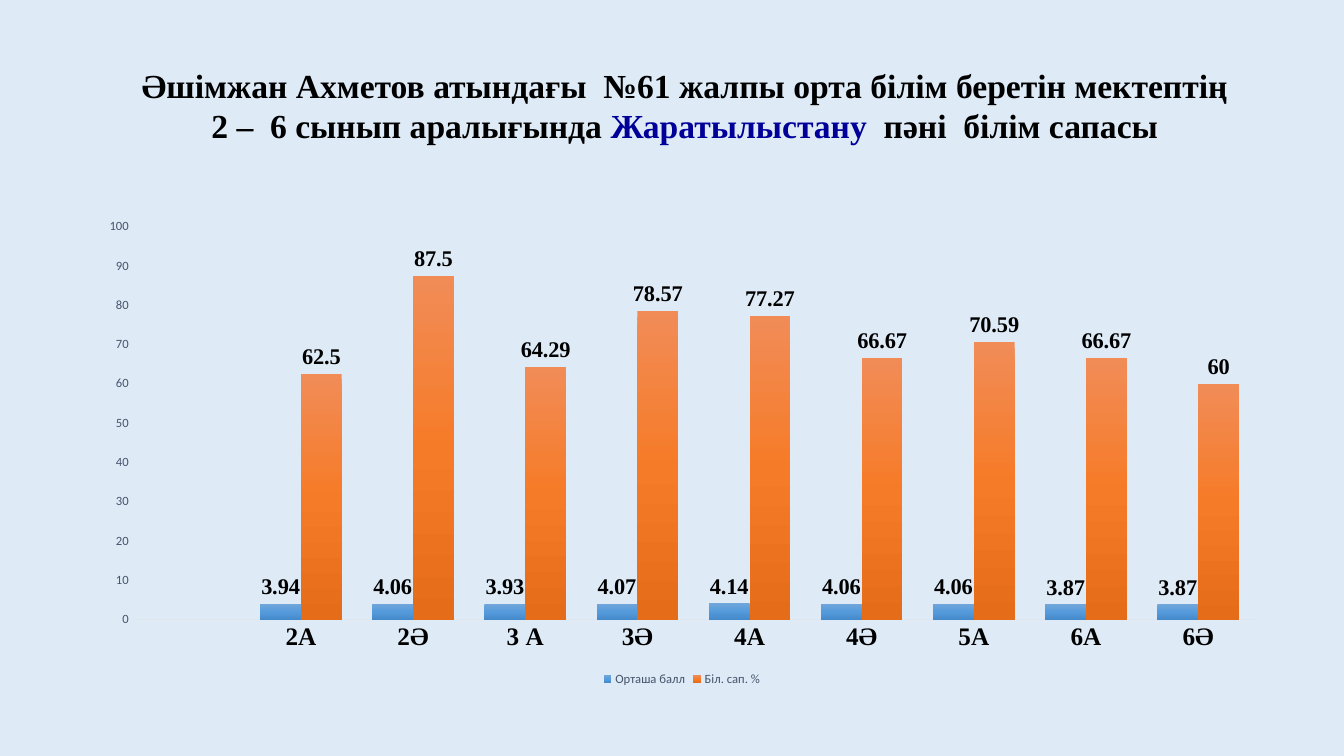
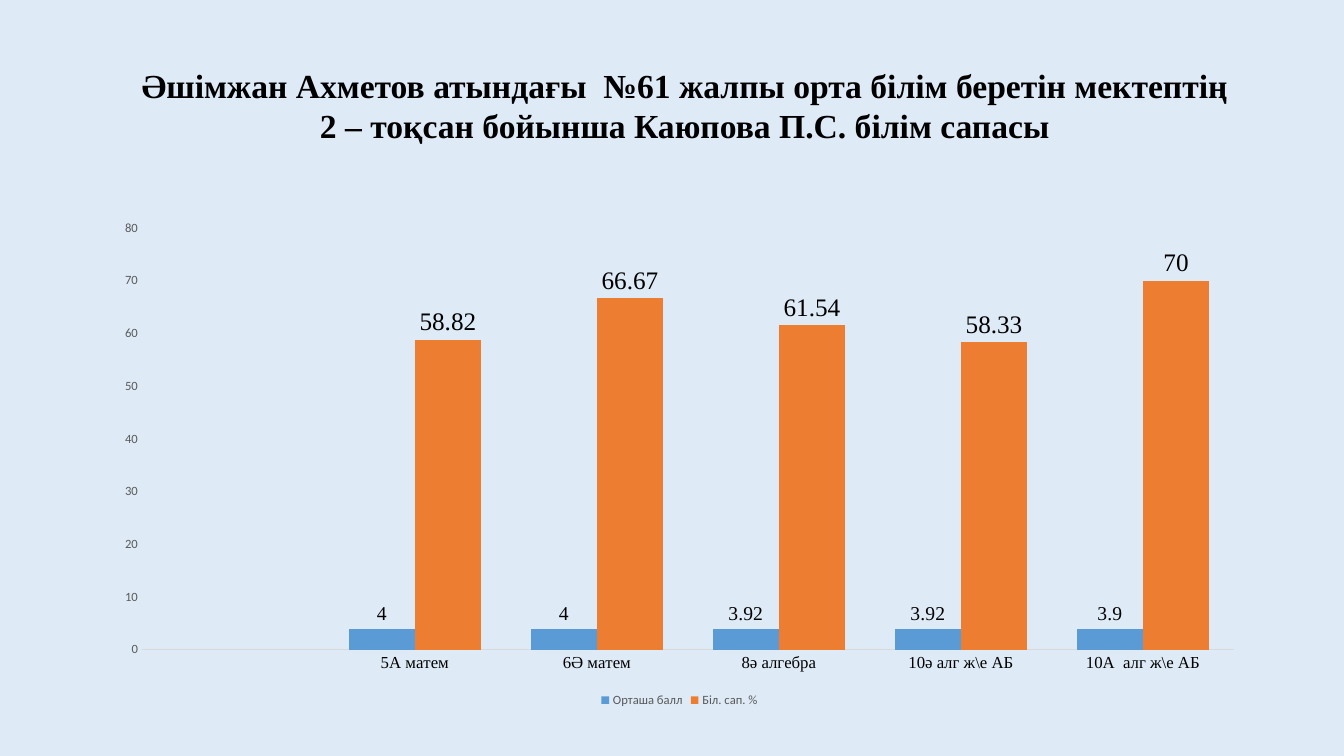
from copy import deepcopy
from dataclasses import dataclass

from pptx import Presentation
from pptx.chart.data import CategoryChartData
from pptx.dml.color import RGBColor
from pptx.enum.chart import XL_CHART_TYPE, XL_LABEL_POSITION, XL_LEGEND_POSITION, XL_TICK_MARK
from pptx.enum.text import MSO_ANCHOR, MSO_AUTO_SIZE, PP_ALIGN
from pptx.oxml.ns import qn
from pptx.util import Cm, Pt

BACKGROUND = "DEEBF7"
BLACK = "000000"
NAVY = "000099"
SERIF = "Times New Roman"
SANS = "Calibri"
SCHOOL = "Әшімжан Ахметов атындағы  №61 жалпы орта білім беретін мектептің"
SCORE, QUALITY = "Орташа балл", "Біл. сап. %"


@dataclass
class ChartStyle:
    """What differs between the two grade charts."""
    box: tuple  # left, top, width, height in cm
    top_value: int
    muted: str
    axis_line: str
    category_size: int
    label_sizes: tuple
    bold: bool
    fills: tuple  # one list of colours per series


def rgb(hex_code):
    return RGBColor.from_string(hex_code)


def set_font(font, name, size, color=BLACK, bold=False):
    font.name = name
    font.size = Pt(size)
    font.color.rgb = rgb(color)
    font.bold = bold


def prepare_layout(prs):
    """Set the background and title place shared by all slides."""
    background = prs.slide_master.background.fill
    background.solid()
    background.fore_color.rgb = rgb(BACKGROUND)
    layout = prs.slide_layouts.get_by_name("Title Only")
    title = layout.placeholders[0]
    title.left, title.top, title.width, title.height = Cm(3.07), Cm(1.5), Cm(28.37), Cm(2.31)
    return layout


def fill_title(slide, lines):
    """Write lines, each a list of (text, colour) runs, into the title."""
    frame = slide.shapes.title.text_frame
    frame.word_wrap = False
    frame.auto_size = MSO_AUTO_SIZE.NONE
    frame.vertical_anchor = MSO_ANCHOR.TOP
    for index, line in enumerate(lines):
        paragraph = frame.add_paragraph() if index else frame.paragraphs[0]
        paragraph.alignment = PP_ALIGN.CENTER
        for text, color in line:
            run = paragraph.add_run()
            run.text = text
            set_font(run.font, SERIF, 24, color, bold=True)


def fill_series(series, colors):
    """Fill with one colour, or with a top-down gradient of evenly spaced ones."""
    fill = series.format.fill
    if len(colors) == 1:
        fill.solid()
        fill.fore_color.rgb = rgb(colors[0])
        return
    fill.gradient()
    fill.gradient_angle = 270
    stop_list = series._element.find(".//" + qn("a:gsLst"))
    while len(stop_list) < len(colors):
        stop_list.append(deepcopy(stop_list[0]))
    for index, (stop, color) in enumerate(zip(fill.gradient_stops, colors)):
        stop.position = index / (len(colors) - 1)
        stop.color.rgb = rgb(color)


def label_series(series, size, bold):
    labels = series.data_labels
    labels.show_value = True
    labels.position = XL_LABEL_POSITION.OUTSIDE_END
    set_font(labels.font, SERIF, size, bold=bold)


def style_axes(chart, style):
    classes, values = chart.category_axis, chart.value_axis
    for axis in (classes, values):
        axis.has_major_gridlines = False
        axis.major_tick_mark = axis.minor_tick_mark = XL_TICK_MARK.NONE
    set_font(classes.tick_labels.font, SERIF, style.category_size, bold=style.bold)
    classes.format.line.color.rgb = rgb(style.axis_line)
    classes.format.line.width = Pt(0.75)
    set_font(values.tick_labels.font, SANS, 9, style.muted)
    values.format.line.fill.background()
    values.minimum_scale, values.maximum_scale = 0, style.top_value
    values.major_unit = 10


def add_grade_chart(slide, grades, style):
    """Plot (class, score, quality) rows after one empty category."""
    names, scores, qualities = zip(("", None, None), *grades)
    data = CategoryChartData()
    data.categories = names
    data.add_series(SCORE, scores)
    data.add_series(QUALITY, qualities)
    box = [Cm(length) for length in style.box]
    chart = slide.shapes.add_chart(XL_CHART_TYPE.COLUMN_CLUSTERED, *box, data).chart
    chart.has_title = False
    set_font(chart.font, SANS, 10)
    chart.has_legend = True
    chart.legend.position = XL_LEGEND_POSITION.BOTTOM
    chart.legend.include_in_layout = False
    set_font(chart.legend.font, SANS, 9, style.muted)
    style_axes(chart, style)
    plot = chart.plots[0]
    plot.gap_width, plot.overlap = 75, 0
    plot.vary_by_categories = False
    for series, colors, size in zip(plot.series, style.fills, style.label_sizes):
        series.invert_if_negative = False
        fill_series(series, colors)
        label_series(series, size, style.bold)


def add_grade_slide(prs, layout, subtitle, grades, style):
    slide = prs.slides.add_slide(layout)
    fill_title(slide, [[(SCHOOL, BLACK)], subtitle])
    add_grade_chart(slide, grades, style)


def main():
    prs = Presentation()
    prs.slide_width, prs.slide_height = Cm(33.87), Cm(19.05)
    layout = prepare_layout(prs)

    add_grade_slide(
        prs, layout,
        [("2 –  6 сынып аралығында ", BLACK), ("Жаратылыстану", NAVY),
         ("  пәні  білім сапасы", BLACK)],
        [("2А", 3.94, 62.5), ("2Ә", 4.06, 87.5), ("3 А", 3.93, 64.29),
         ("3Ә", 4.07, 78.57), ("4А", 4.14, 77.27), ("4Ә", 4.06, 66.67),
         ("5А", 4.06, 70.59), ("6А", 3.87, 66.67), ("6Ә", 3.87, 60)],
        ChartStyle(
            box=(2.16, 5.28, 30.05, 12.12), top_value=100, muted="44546A",
            axis_line="E0E5EB", category_size=18, label_sizes=(16, 16), bold=True,
            fills=(["71A6DB", "559BDB", "448ACA"], ["F18C57", "F67B28", "E56C19"])))

    add_grade_slide(
        prs, layout,
        [("2 – тоқсан бойынша Каюпова П.С. білім сапасы", BLACK)],
        [("5А матем", 4, 58.82), ("6Ә матем", 4, 66.67), ("8ә алгебра", 3.92, 61.54),
         ("10ә алг ж\\е АБ", 3.92, 58.33), ("10А  алг ж\\е АБ", 3.9, 70)],
        ChartStyle(
            box=(2.57, 5.31, 29.11, 12.62), top_value=80, muted="595959",
            axis_line="D9D9D9", category_size=12, label_sizes=(14, 18), bold=False,
            fills=(["5B9BD5"], ["ED7D31"])))

    prs.save("out.pptx")


if __name__ == "__main__":
    main()
